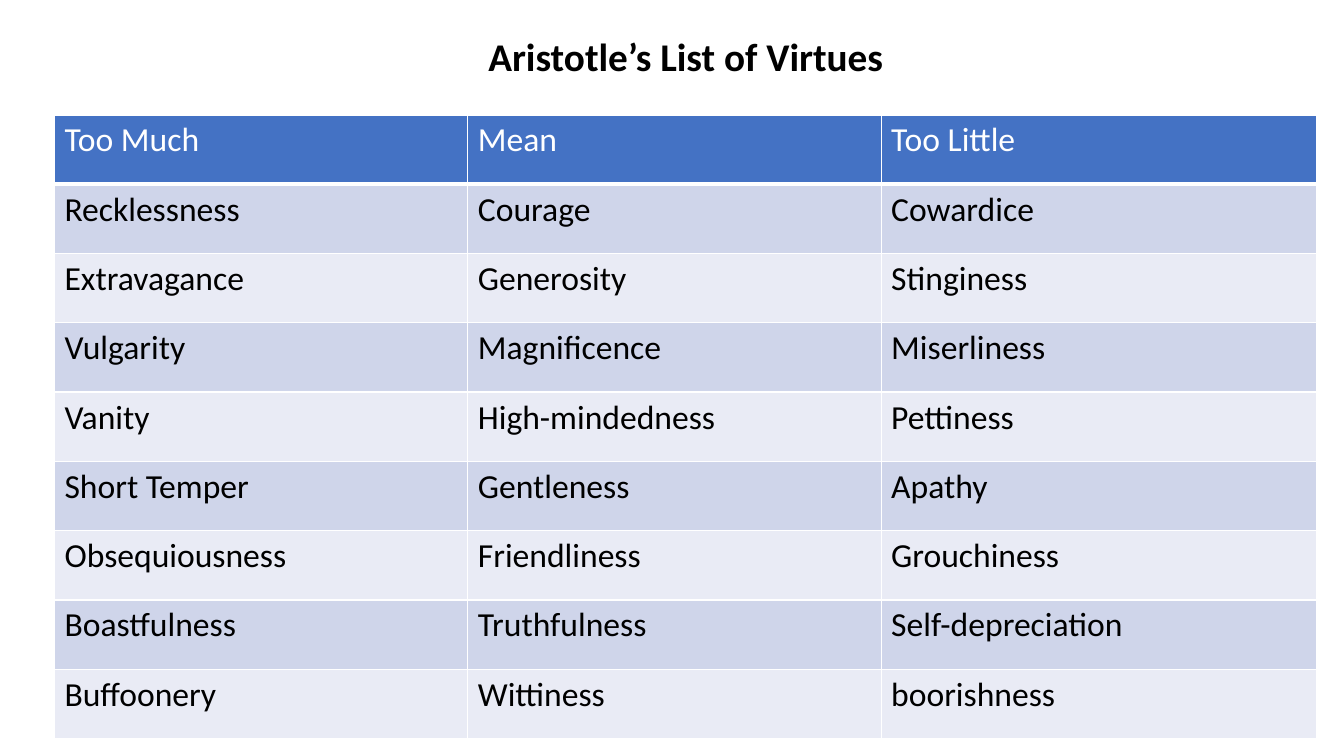
from dataclasses import dataclass
from typing import NamedTuple

from lxml.etree import SubElement
from pptx import Presentation
from pptx.dml.color import RGBColor
from pptx.enum.text import MSO_ANCHOR, PP_ALIGN
from pptx.oxml.ns import qn
from pptx.slide import Slide
from pptx.table import _Cell
from pptx.text.text import _Paragraph
from pptx.util import Inches, Pt


@dataclass(frozen=True)
class Theme:
    """Colours, font and type sizes."""

    font: str = "Calibri"
    title: int = 28
    body: int = 24
    black: str = "000000"
    white: str = "FFFFFF"
    head: str = "4472C4"
    dark: str = "CFD5EA"
    light: str = "E9EBF5"


class Virtue(NamedTuple):
    """A virtue between its two vices."""

    much: str
    mean: str
    little: str


class Look(NamedTuple):
    """The style of one table row."""

    fill: str
    ink: str
    base: int


THEME = Theme()
WIDTHS = (4.1, 4.1, 4.32)
HEIGHT = 6.19
ROWS = (
    Virtue("Too Much", "Mean", "Too Little"),
    Virtue("Recklessness", "Courage", "Cowardice"),
    Virtue("Extravagance", "Generosity", "Stinginess"),
    Virtue("Vulgarity", "Magnificence", "Miserliness"),
    Virtue("Vanity", "High-mindedness", "Pettiness"),
    Virtue("Short Temper", "Gentleness", "Apathy"),
    Virtue("Obsequiousness", "Friendliness", "Grouchiness"),
    Virtue("Boastfulness", "Truthfulness", "Self-depreciation"),
    Virtue("Buffoonery", "Wittiness", "boorishness"),
)


def write(para: _Paragraph, text: str, size: int, ink: str, bold: bool = False) -> None:
    """Fill a paragraph with styled text."""
    para.text = text
    font = para.font
    font.name, font.size, font.bold = THEME.font, Pt(size), bold
    font.color.rgb = RGBColor.from_string(ink)


def edge(cell: _Cell, base: int) -> None:
    """Draw white borders, with the bottom one base points wide."""
    props = cell._tc.get_or_add_tcPr()
    for side, width in (("L", 1), ("R", 1), ("T", 1), ("B", base)):
        line = SubElement(props, qn(f"a:ln{side}"), w=str(Pt(width)))
        fill = SubElement(line, qn("a:solidFill"))
        SubElement(fill, qn("a:srgbClr"), val=THEME.white)


def style(row: int) -> Look:
    """Choose the look of a row by its place."""
    if row == 0:
        return Look(THEME.head, THEME.white, 3)
    return Look(THEME.dark if row % 2 else THEME.light, THEME.black, 1)


def add_title(slide: Slide) -> None:
    """Add the heading."""
    box = slide.shapes.add_textbox(Inches(1.99), Inches(0.23), Inches(9.62), Inches(0.71))
    frame = box.text_frame
    frame.word_wrap = True
    frame.vertical_anchor = MSO_ANCHOR.MIDDLE
    para = frame.paragraphs[0]
    para.alignment = PP_ALIGN.CENTER
    para.line_spacing = 0.9
    write(para, "Aristotle’s List of Virtues", THEME.title, THEME.black, True)


def add_grid(slide: Slide) -> None:
    """Add the table of virtues."""
    grid = slide.shapes.add_table(
        len(ROWS), len(WIDTHS), Inches(0.54), Inches(1.14), Inches(sum(WIDTHS)), Inches(HEIGHT)
    ).table
    for column, width in zip(grid.columns, WIDTHS):
        column.width = Inches(width)
    for row, virtue in enumerate(ROWS):
        look = style(row)
        for col, text in enumerate(virtue):
            cell = grid.cell(row, col)
            edge(cell, look.base)
            cell.fill.solid()
            cell.fill.fore_color.rgb = RGBColor.from_string(look.fill)
            write(cell.text_frame.paragraphs[0], text, THEME.body, look.ink)


def main() -> None:
    """Build and save the slide."""
    deck = Presentation()
    deck.slide_width, deck.slide_height = Inches(13.33), Inches(7.5)
    slide = deck.slides.add_slide(deck.slide_layouts[6])
    add_title(slide)
    add_grid(slide)
    deck.save("out.pptx")


if __name__ == "__main__":
    main()
